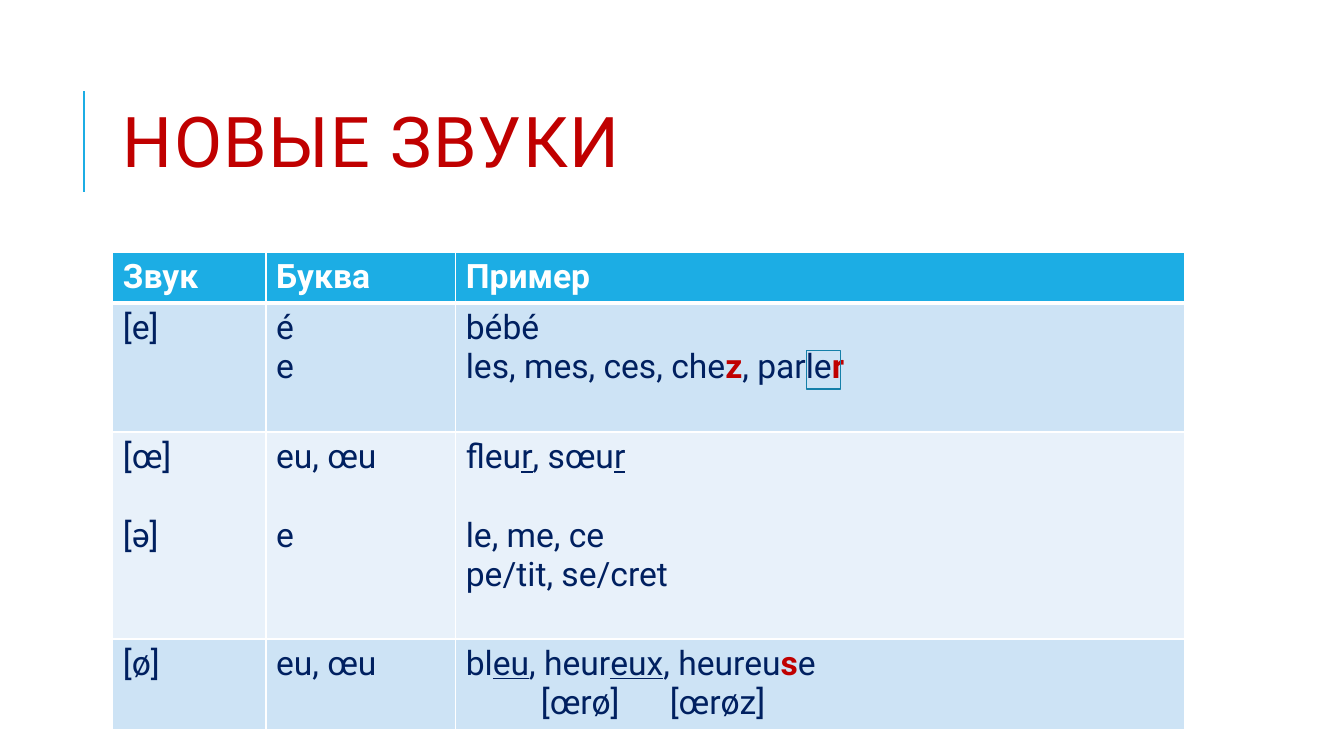
from lxml import etree
from pptx import Presentation
from pptx.dml.color import RGBColor
from pptx.enum import shapes, text
from pptx.oxml import ns
from pptx.util import Pt

WHITE = RGBColor(0xFF, 0xFF, 0xFF)
NAVY = RGBColor(0x00, 0x20, 0x60)
RED = RGBColor(0xC0, 0x00, 0x00)
CYAN = RGBColor(0x1C, 0xAD, 0xE4)
TEAL = RGBColor(0x15, 0x80, 0xA9)
BAND_DARK = RGBColor(0xCD, 0xE3, 0xF5)
BAND_LIGHT = RGBColor(0xE8, 0xF1, 0xFA)

TITLE = "НОВЫЕ ЗВУКИ"
HEADERS = ["Звук", "Буква", "Пример"]
KEY = {"color": RED, "bold": True}
LINK = {"underline": True}
GAP = {"before": 28.1}
SOUNDS = [
    [
        [(["[e]"], {})],
        [(["é"], {}), (["e"], {})],
        [(["bébé"], {}),
         (["les, mes, ces, che", ("z", KEY), ", parle", ("r", KEY)], {})],
    ],
    [
        [(["[œ]"], {}), (["[ə]"], GAP)],
        [(["eu, œu"], {}), (["e"], GAP)],
        [(["fleu", ("r", LINK), ", sœu", ("r\t", LINK)], {"tabs": [132]}),
         (["le, me, ce"], GAP),
         (["pe/tit, se/cret"], {})],
    ],
    [
        [(["[ø]"], {})],
        [(["eu, œu"], {})],
        [(["bl", ("eu", LINK), ", heur", ("eux", LINK), ", heureu",
           ("s", KEY), "e"], {}),
         (["\t[œrø]\t[œrøz]"], {"tabs": [53.6, 145.7]})],
    ],
]
COL_WIDTHS = [109.5, 135.5, 520.5]
ROW_HEIGHTS = [34.5, 92.2, 147.8, 63.2]
LEFT, TABLE_TOP = 80.6, 180.4


def add_run(p, content, size=24, color=NAVY, bold=False, underline=False, spacing=0):
    r = p.add_run()
    r.text = content
    f = r.font
    f.name, f.size, f.bold, f.underline = "Roboto", Pt(size), bold, underline
    f.color.rgb = color
    if spacing:
        r._r.get_or_add_rPr().set("spc", str(spacing * 100))


def fill_cell(cell, lines, fill, bottom=1, **style):
    cell.fill.solid()
    cell.fill.fore_color.rgb = fill
    tf = cell.text_frame
    for i, (parts, layout) in enumerate(lines):
        p = tf.add_paragraph() if i else tf.paragraphs[0]
        p.space_before = Pt(layout.get("before", 0))
        if "tabs" in layout:
            stops = etree.SubElement(p._p.get_or_add_pPr(), ns.qn("a:tabLst"))
            for pos in layout["tabs"]:
                etree.SubElement(stops, ns.qn("a:tab"), pos=str(Pt(pos)), algn="l")
        for part in parts:
            content, mark = (part, {}) if isinstance(part, str) else part
            add_run(p, content, **{**style, **mark})
    props = cell._tc.get_or_add_tcPr()
    for i, (side, width) in enumerate([("L", 1), ("R", 1), ("T", 1), ("B", bottom)]):
        ln = etree.Element(ns.qn("a:ln" + side), w=str(Pt(width)))
        solid = etree.SubElement(ln, ns.qn("a:solidFill"))
        etree.SubElement(solid, ns.qn("a:srgbClr"), val=str(WHITE))
        props.insert(i, ln)


prs = Presentation()
prs.slide_width, prs.slide_height = Pt(960), Pt(540)
s = prs.slides.add_slide(prs.slide_layouts[6])

accent = s.shapes.add_connector(
    shapes.MSO_CONNECTOR.STRAIGHT, Pt(60), Pt(136.8), Pt(60), Pt(64.8))
accent.line.color.rgb, accent.line.width = CYAN, Pt(1.5)
etree.SubElement(accent._element.spPr, ns.qn("a:effectLst"))

title = s.shapes.add_textbox(Pt(LEFT), Pt(46.1), Pt(sum(COL_WIDTHS)), Pt(118.1))
tf = title.text_frame
tf.word_wrap = True
tf.vertical_anchor = text.MSO_ANCHOR.MIDDLE
tf.paragraphs[0].line_spacing = 0.8
add_run(tf.paragraphs[0], TITLE, size=50, color=RED, spacing=1)

table = s.shapes.add_table(
    len(ROW_HEIGHTS), len(COL_WIDTHS), Pt(LEFT), Pt(TABLE_TOP),
    Pt(sum(COL_WIDTHS)), Pt(sum(ROW_HEIGHTS))).table
for col, width in zip(table.columns, COL_WIDTHS):
    col.width = Pt(width)
for row, height in zip(table.rows, ROW_HEIGHTS):
    row.height = Pt(height)
for c, header in enumerate(HEADERS):
    fill_cell(table.cell(0, c), [([header], {})], CYAN, bottom=3, color=WHITE, bold=True)
for r, sound in enumerate(SOUNDS, 1):
    for c, lines in enumerate(sound):
        fill_cell(table.cell(r, c), lines, BAND_DARK if r % 2 else BAND_LIGHT)

frame = s.shapes.add_shape(
    shapes.MSO_SHAPE.RECTANGLE, Pt(576), Pt(250.4), Pt(24.4), Pt(27.4))
frame.shadow.inherit = False
frame.fill.background()
frame.line.color.rgb, frame.line.width = TEAL, Pt(1.25)

prs.save("out.pptx")
